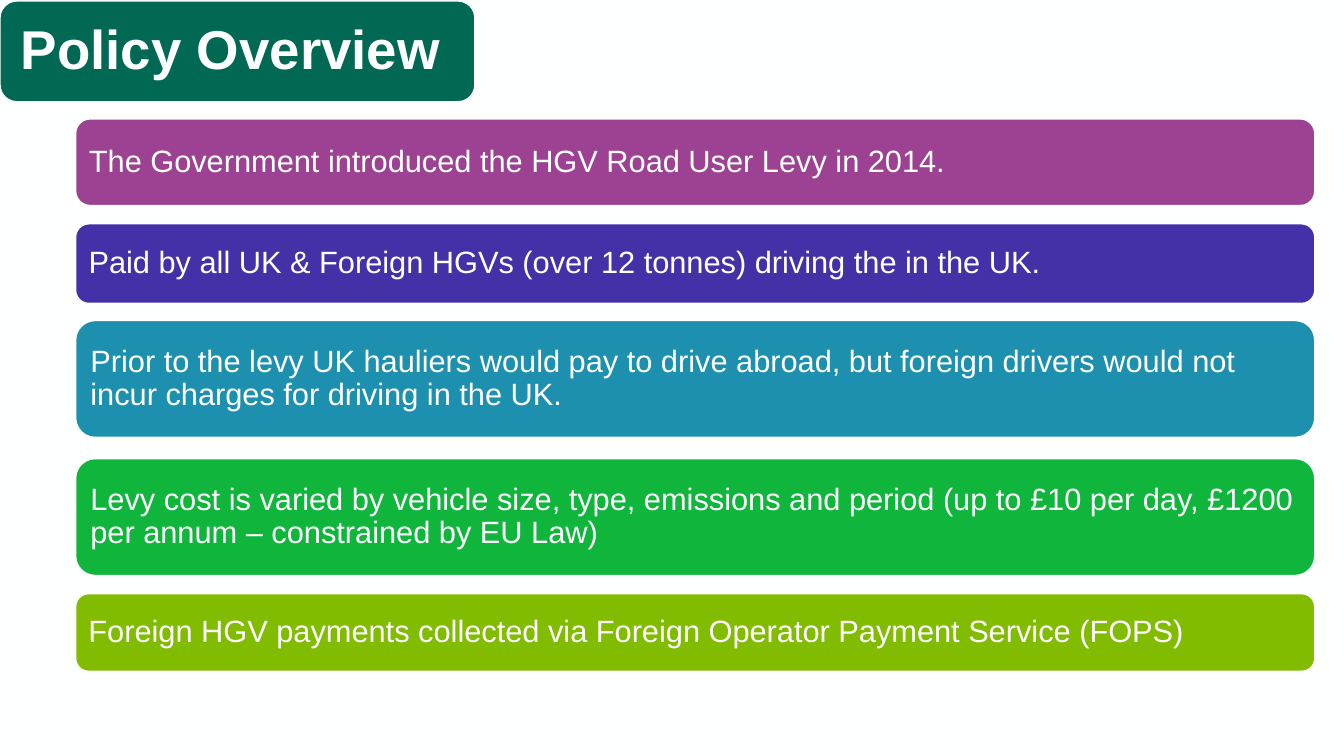
from pptx import Presentation
from pptx.dml.color import RGBColor
from pptx.enum import shapes, text
from pptx.util import Inches, Pt

WHITE = RGBColor(0xFE, 0xFF, 0xFF)
DARK_GREEN = RGBColor(0x00, 0x68, 0x53)
PURPLE = RGBColor(0x9D, 0x42, 0x92)
INDIGO = RGBColor(0x44, 0x30, 0xA7)
BLUE = RGBColor(0x1E, 0x90, 0xAF)
GREEN = RGBColor(0x0F, 0xB6, 0x3B)
LIME = RGBColor(0x81, 0xBC, 0x00)

POINTS = [
    (0, 0.86, PURPLE, "The Government introduced the HGV Road User Levy in 2014."),
    (1.04, 0.79, INDIGO, "Paid by all UK & Foreign HGVs (over 12 tonnes) driving the in the UK."),
    (2, 1.16, BLUE, "Prior to the levy UK hauliers would pay to drive abroad, "
     "but foreign drivers would not incur charges for driving in the UK."),
    (3.37, 1.16, GREEN, "Levy cost is varied by vehicle size, type, emissions and period "
     "(up to £10 per day, £1200 per annum – constrained by EU Law)"),
    (4.71, 0.77, LIME, "Foreign HGV payments collected via Foreign Operator Payment Service (FOPS)"),
]


def add_bar(s, left, top, width, height, fill, wording, size, inset, bold=False):
    """Add a rounded bar with left-aligned text."""
    sp = s.shapes.add_shape(shapes.MSO_SHAPE.ROUNDED_RECTANGLE, Inches(left),
                            Inches(top), Inches(width), Inches(height))
    sp.shadow.inherit = False
    sp.fill.solid()
    sp.fill.fore_color.rgb = fill
    sp.line.color.rgb = WHITE
    sp.line.width = Pt(1)
    tf = sp.text_frame
    tf.word_wrap = True
    tf.vertical_anchor = text.MSO_ANCHOR.MIDDLE
    tf.margin_left = tf.margin_right = Inches(inset)
    tf.margin_top = tf.margin_bottom = Inches(inset)
    p = tf.paragraphs[0]
    p.text = wording
    p.alignment = text.PP_ALIGN.LEFT
    p.line_spacing = 0.9
    p.font.name = "Arial"
    p.font.size = Pt(size)
    p.font.bold = bold
    p.font.color.rgb = WHITE


def add_title(s, left, top, width, height):
    """Add the title bar."""
    add_bar(s, left, top, width, height, DARK_GREEN, "Policy Overview", 39, 0.16, True)


def add_points(s, left, top, width):
    """Add the policy points as a column of bars."""
    for offset, height, fill, wording in POINTS:
        add_bar(s, left, top + offset, width, height, fill, wording, 22, 0.09)


def main():
    """Build and save the slide."""
    prs = Presentation()
    prs.slide_width, prs.slide_height = Inches(13.33), Inches(7.5)
    s = prs.slides.add_slide(prs.slide_layouts[6])
    s.background.fill.solid()
    s.background.fill.fore_color.rgb = WHITE
    add_points(s, 0.75, 1.18, 12.29)
    add_title(s, 0, 0.01, 4.71, 1)
    prs.save("out.pptx")


if __name__ == "__main__":
    main()
